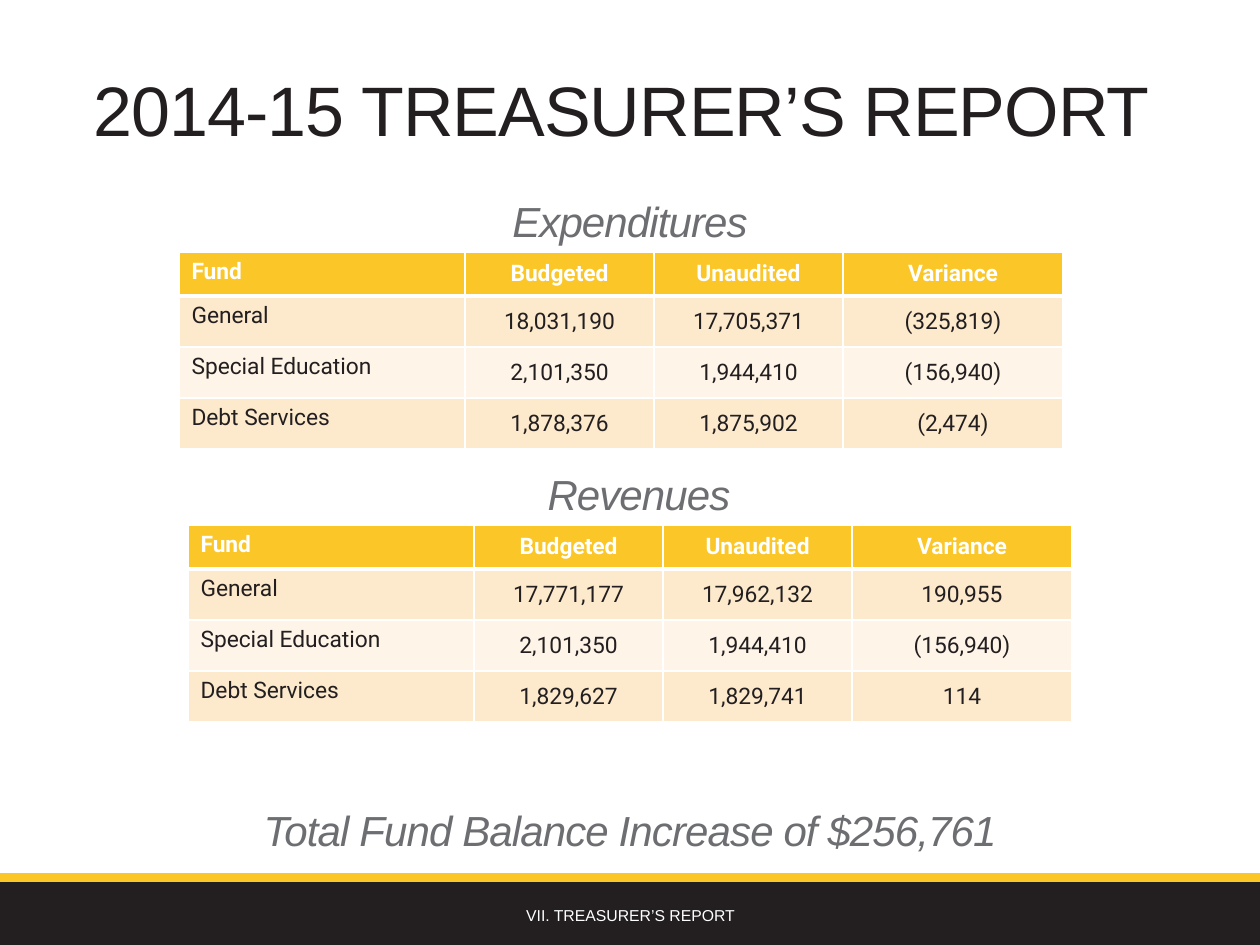
from dataclasses import dataclass

from lxml.etree import SubElement
from pptx import Presentation
from pptx.dml.color import RGBColor
from pptx.enum.shapes import MSO_SHAPE
from pptx.enum.text import MSO_ANCHOR, PP_ALIGN
from pptx.oxml.ns import qn
from pptx.util import Pt

SCALE = 914400 / 126  # EMU in one px

WHITE = RGBColor(0xFF, 0xFF, 0xFF)
INK = RGBColor(0x23, 0x1F, 0x20)
GRAY = RGBColor(0x6D, 0x6E, 0x71)
GOLD = RGBColor(0xFA, 0xC6, 0x28)
CREAM = RGBColor(0xFD, 0xEA, 0xCD)
PALE = RGBColor(0xFE, 0xF5, 0xE8)

HEAD = ("Fund", "Budgeted", "Unaudited", "Variance")
COLS = (286, 189, 189, 220)
ROWS = (44, 51, 51, 51)


@dataclass(frozen=True)
class Box:
    left: int
    top: int
    width: int
    height: int

    def emu(self) -> list[int]:
        return [emu(n) for n in (self.left, self.top, self.width, self.height)]


@dataclass(frozen=True)
class Style:
    size: int
    color: RGBColor
    font: str = "Arial"
    bold: bool = False
    italic: bool = False
    space: int = 0  # hundredths of a point


@dataclass(frozen=True)
class Label:
    text: str
    box: Box
    style: Style
    anchor: MSO_ANCHOR = MSO_ANCHOR.BOTTOM
    lines: float = 1.0


@dataclass(frozen=True)
class Ledger:
    left: int
    top: int
    funds: tuple[tuple[str, ...], ...]


TITLE = Style(40, INK, space=-50)
SUB = Style(24, GRAY, italic=True, space=-50)
FOOT = Style(9, WHITE)
TOP = Style(13, WHITE, "Roboto", bold=True)
BODY = Style(13, INK, "Roboto")

BARS = (
    (Box(0, 882, 1260, 63), INK),
    (Box(0, 873, 1260, 9), GOLD),
)
LABELS = (
    Label("2014-15 TREASURER’S REPORT ", Box(0, 10, 1260, 147), TITLE, lines=1.2),
    Label("Expenditures", Box(0, 189, 1260, 63), SUB),
    Label("Revenues", Box(9, 462, 1260, 63), SUB),
    Label("Total Fund Balance Increase of $256,761", Box(0, 798, 1260, 63), SUB),
    Label("VII. TREASURER’S REPORT", Box(381, 890, 499, 50), FOOT, MSO_ANCHOR.MIDDLE),
)
LEDGERS = (
    Ledger(179, 252, (
        ("General", "18,031,190", "17,705,371", "(325,819)"),
        ("Special Education", "2,101,350", "1,944,410", "(156,940)"),
        ("Debt Services", "1,878,376", "1,875,902", "(2,474)"),
    )),
    Ledger(188, 525, (
        ("General", "17,771,177", "17,962,132", "190,955"),
        ("Special Education", "2,101,350", "1,944,410", "(156,940)"),
        ("Debt Services", "1,829,627", "1,829,741", "114"),
    )),
)


def emu(px: int) -> int:
    return round(px * SCALE)


def add_run(para, text: str, style: Style) -> None:
    run = para.add_run()
    run.text = text
    font = run.font
    font.name, font.size = style.font, Pt(style.size)
    font.bold, font.italic = style.bold, style.italic
    font.color.rgb = style.color
    if style.space:
        run._r.get_or_add_rPr().set("spc", str(style.space))


def add_bar(slide, box: Box, color: RGBColor) -> None:
    bar = slide.shapes.add_shape(MSO_SHAPE.RECTANGLE, *box.emu())
    bar.shadow.inherit = False
    bar.fill.solid()
    bar.fill.fore_color.rgb = color
    bar.line.fill.background()


def add_label(slide, label: Label) -> None:
    frame = slide.shapes.add_textbox(*label.box.emu()).text_frame
    frame.word_wrap = True
    frame.vertical_anchor = label.anchor
    para = frame.paragraphs[0]
    para.alignment = PP_ALIGN.CENTER
    para.line_spacing = label.lines
    add_run(para, label.text, label.style)


def add_edge(cell, side: str, width: int) -> None:
    line = SubElement(cell._tc.get_or_add_tcPr(), qn(f"a:ln{side}"), w=str(Pt(width)))
    fill = SubElement(line, qn("a:solidFill"))
    SubElement(fill, qn("a:srgbClr"), val=str(WHITE))


def fill_cell(cell, text: str, row: int, col: int) -> None:
    # Borders go before the fill, with a heavy rule under the header
    for side in "LRTB":
        heavy = (row, side) in ((0, "B"), (1, "T"))
        add_edge(cell, side, 3 if heavy else 1)
    cell.fill.solid()
    cell.fill.fore_color.rgb = GOLD if row == 0 else CREAM if row % 2 else PALE
    cell.vertical_anchor = MSO_ANCHOR.MIDDLE if col else MSO_ANCHOR.TOP
    para = cell.text_frame.paragraphs[0]
    para.alignment = PP_ALIGN.CENTER if col else PP_ALIGN.LEFT
    add_run(para, text, BODY if row else TOP)


def add_ledger(slide, ledger: Ledger) -> None:
    box = Box(ledger.left, ledger.top, sum(COLS), sum(ROWS))
    table = slide.shapes.add_table(len(ROWS), len(COLS), *box.emu()).table
    for col, width in zip(table.columns, COLS):
        col.width = emu(width)
    for row, height in zip(table.rows, ROWS):
        row.height = emu(height)
    for r, texts in enumerate((HEAD, *ledger.funds)):
        for c, text in enumerate(texts):
            fill_cell(table.cell(r, c), text, r, c)


def main() -> None:
    deck = Presentation()
    deck.slide_width, deck.slide_height = emu(1260), emu(945)
    slide = deck.slides.add_slide(deck.slide_layouts[6])

    # Footer band
    for box, color in BARS:
        add_bar(slide, box, color)

    # Fund tables
    for ledger in LEDGERS:
        add_ledger(slide, ledger)

    # Title, headings and footer text
    for label in LABELS:
        add_label(slide, label)

    deck.save("out.pptx")


if __name__ == "__main__":
    main()
